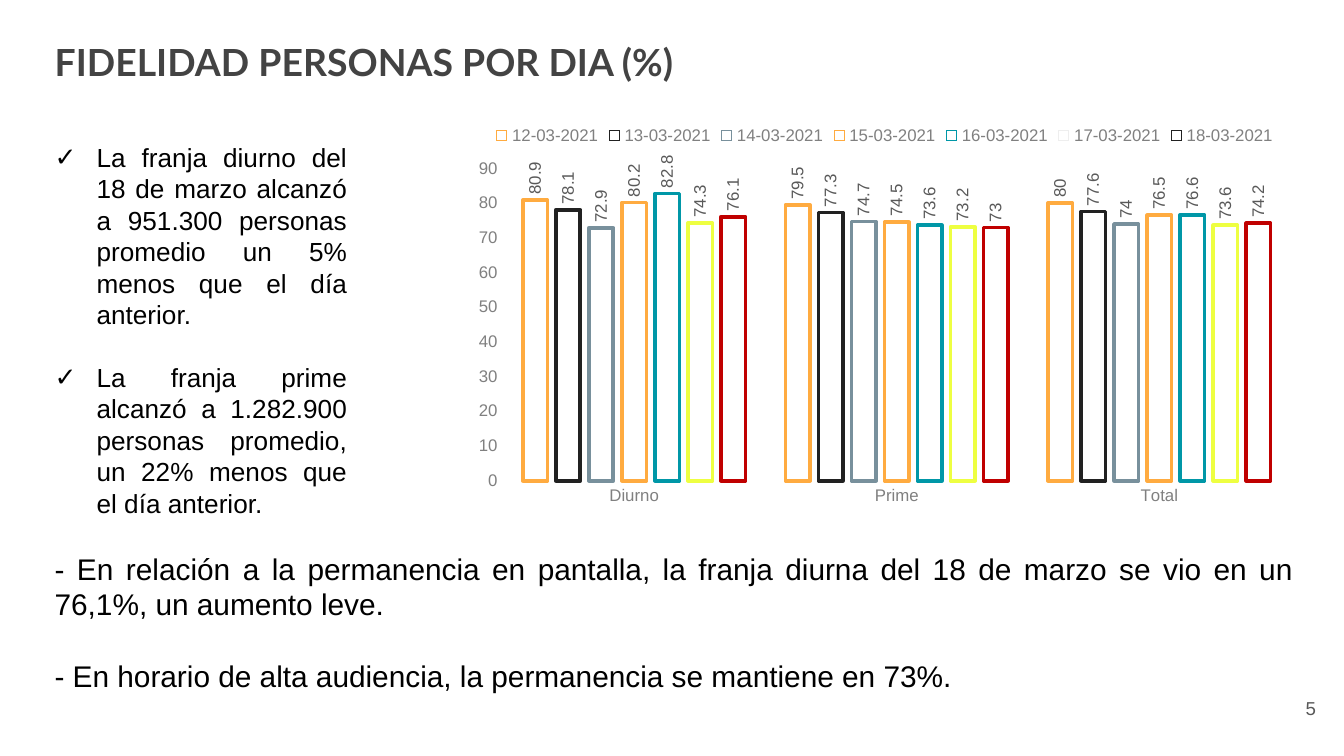
from dataclasses import dataclass

import pptx
import pptx.chart.data
import pptx.dml.color
import pptx.enum.chart
import pptx.enum.text
import pptx.oxml
import pptx.oxml.ns
import pptx.util

EMU_PER_PX = 9525  # 96 px to the inch
ALIGN = pptx.enum.text.PP_ALIGN
ANCHOR = pptx.enum.text.MSO_ANCHOR


@dataclass(frozen=True)
class Theme:
    heading_font: str = "Lato"
    body_font: str = "Arial"
    heading: str = "434343"
    text: str = "000000"
    label: str = "595959"
    axis: str = "808080"
    title_size: int = 20
    note_size: int = 16
    list_size: int = 14
    number_size: int = 10
    chart_size: int = 9


@dataclass(frozen=True)
class Box:
    x: int
    y: int
    w: int
    h: int

    def emu(self) -> tuple[int, ...]:
        return tuple(v * EMU_PER_PX for v in (self.x, self.y, self.w, self.h))


@dataclass(frozen=True)
class DaySeries:
    name: str
    values: tuple[float, ...]
    color: str
    legend_color: str = ""  # when the legend key differs from the bars


THEME = Theme()
BANDS = ("Diurno", "Prime", "Total")
DAYS = (
    DaySeries("12-03-2021", (80.9, 79.5, 80), "FFAB40"),
    DaySeries("13-03-2021", (78.1, 77.3, 77.6), "212121"),
    DaySeries("14-03-2021", (72.9, 74.7, 74), "78909C"),
    DaySeries("15-03-2021", (80.2, 74.5, 76.5), "FFAB40"),
    DaySeries("16-03-2021", (82.8, 73.6, 76.6), "0097A7"),
    DaySeries("17-03-2021", (74.3, 73.2, 73.6), "EEFF41", "EEEEEE"),
    DaySeries("18-03-2021", (76.1, 73, 74.2), "C00000", "212121"),
)
FINDINGS = (
    "La franja diurno del 18 de marzo alcanzó a 951.300 personas promedio "
    "un 5% menos que el día anterior.",
    "La franja prime alcanzó a 1.282.900 personas promedio, "
    "un 22% menos que el día anterior.",
)
NOTES = (
    "- En relación a la permanencia en pantalla, la franja diurna del 18 de marzo "
    "se vio en un 76,1%, un aumento leve.",
    "- En horario de alta audiencia, la permanencia se mantiene en 73%.",
)


def rgb(color: str) -> pptx.dml.color.RGBColor:
    return pptx.dml.color.RGBColor.from_string(color)


def style_font(font, size: int, color: str, name: str = THEME.body_font, bold: bool = False) -> None:
    font.size, font.name, font.bold = pptx.util.Pt(size), name, bold
    font.color.rgb = rgb(color)


def set_frame(sp, box: Box, inset: int, anchor=ANCHOR.TOP):
    """Place a text shape, set its margins (in px) and return its frame."""
    sp.left, sp.top, sp.width, sp.height = box.emu()
    tf = sp.text_frame
    tf.word_wrap, tf.auto_size = True, pptx.enum.text.MSO_AUTO_SIZE.NONE
    tf.vertical_anchor = anchor
    tf.margin_left = tf.margin_right = 10 * EMU_PER_PX
    tf.margin_top = tf.margin_bottom = inset * EMU_PER_PX
    return tf


def fill_body(sp, box: Box, lines: tuple[str, ...], size: int, bullet: str = "") -> None:
    """Write justified paragraphs, one line apart, with an optional bullet."""
    tf = set_frame(sp, box, 5)
    tf.text = "\n".join(lines)
    for i, p in enumerate(tf.paragraphs):
        p.alignment, p.line_spacing = ALIGN.JUSTIFY, 1.0
        p.space_before = pptx.util.Pt(round(size * 1.2) if i else 0)
        style_font(p.runs[0].font, size, THEME.text)
        pPr = p._p.get_or_add_pPr()
        indent = 30 * EMU_PER_PX if bullet else 0
        pPr.set("marL", str(indent))
        pPr.set("indent", str(-indent))
        tag = f'buChar char="{bullet}"' if bullet else "buNone"
        pPr.append(pptx.oxml.parse_xml(f'<a:{tag} {pptx.oxml.ns.nsdecls("a")}/>'))


def outline(fmt, color: str) -> None:
    fmt.fill.background()
    fmt.line.color.rgb = rgb(color)
    fmt.line.width = pptx.util.Pt(2)


def add_day_chart(s, box: Box) -> None:
    data = pptx.chart.data.CategoryChartData()
    data.categories = BANDS
    for day in DAYS:
        data.add_series(day.name, day.values)
    kind = pptx.enum.chart.XL_CHART_TYPE.COLUMN_CLUSTERED
    chart = s.shapes.add_chart(kind, *box.emu(), data).chart
    style_font(chart.font, THEME.number_size, THEME.text)
    chart.has_title = False

    # Legend and axes
    chart.has_legend = True
    chart.legend.position = pptx.enum.chart.XL_LEGEND_POSITION.TOP
    chart.legend.include_in_layout = False
    style_font(chart.legend.font, THEME.chart_size, THEME.axis)
    for axis in (chart.category_axis, chart.value_axis):
        axis.has_major_gridlines = False
        axis.major_tick_mark = axis.minor_tick_mark = pptx.enum.chart.XL_TICK_MARK.NONE
        axis.format.line.fill.background()
        style_font(axis.tick_labels.font, THEME.chart_size, THEME.axis)
    chart.value_axis.minimum_scale = 0

    # Hollow bars with upright value labels
    plot = chart.plots[0]
    plot.gap_width, plot.overlap, plot.vary_by_categories = 164, -35, False
    for ser, day in zip(plot.series, DAYS):
        outline(ser.format, day.legend_color or day.color)
        if day.legend_color:
            for i in range(len(BANDS)):
                outline(ser.points[i].format, day.color)
        labels = ser.data_labels
        labels.show_value = True
        labels.position = pptx.enum.chart.XL_LABEL_POSITION.OUTSIDE_END
        style_font(labels.font, THEME.chart_size, THEME.label)
    for body in chart.element.xpath(".//c:dLbls/c:txPr/a:bodyPr"):
        body.set("rot", "-5400000")
        body.set("vert", "horz")


def main() -> None:
    prs = pptx.Presentation()
    prs.slide_width, prs.slide_height = 960 * EMU_PER_PX, 540 * EMU_PER_PX
    s = prs.slides.add_slide(prs.slide_layouts[3])
    title, findings, notes = s.placeholders

    # Title
    tf = set_frame(title, Box(29, 18, 805, 60), 10)
    tf.text = "FIDELIDAD PERSONAS POR DIA (%)"
    p = tf.paragraphs[0]
    p.alignment = ALIGN.LEFT
    style_font(p.runs[0].font, THEME.title_size, THEME.heading, THEME.heading_font, True)

    # Findings, chart and notes
    fill_body(findings, Box(29, 96, 229, 281), FINDINGS, THEME.list_size, "✓")
    add_day_chart(s, Box(330, 79, 604, 288))
    fill_body(notes, Box(29, 388, 905, 135), NOTES, THEME.note_size)

    # Slide number
    box = Box(892, 485, 58, 41)
    tf = set_frame(s.shapes.add_textbox(*box.emu()), box, 10, ANCHOR.MIDDLE)
    tf.text = "5"
    p = tf.paragraphs[0]
    p.alignment = ALIGN.RIGHT
    style_font(p.runs[0].font, THEME.number_size, THEME.label)

    prs.save("out.pptx")


if __name__ == "__main__":
    main()
